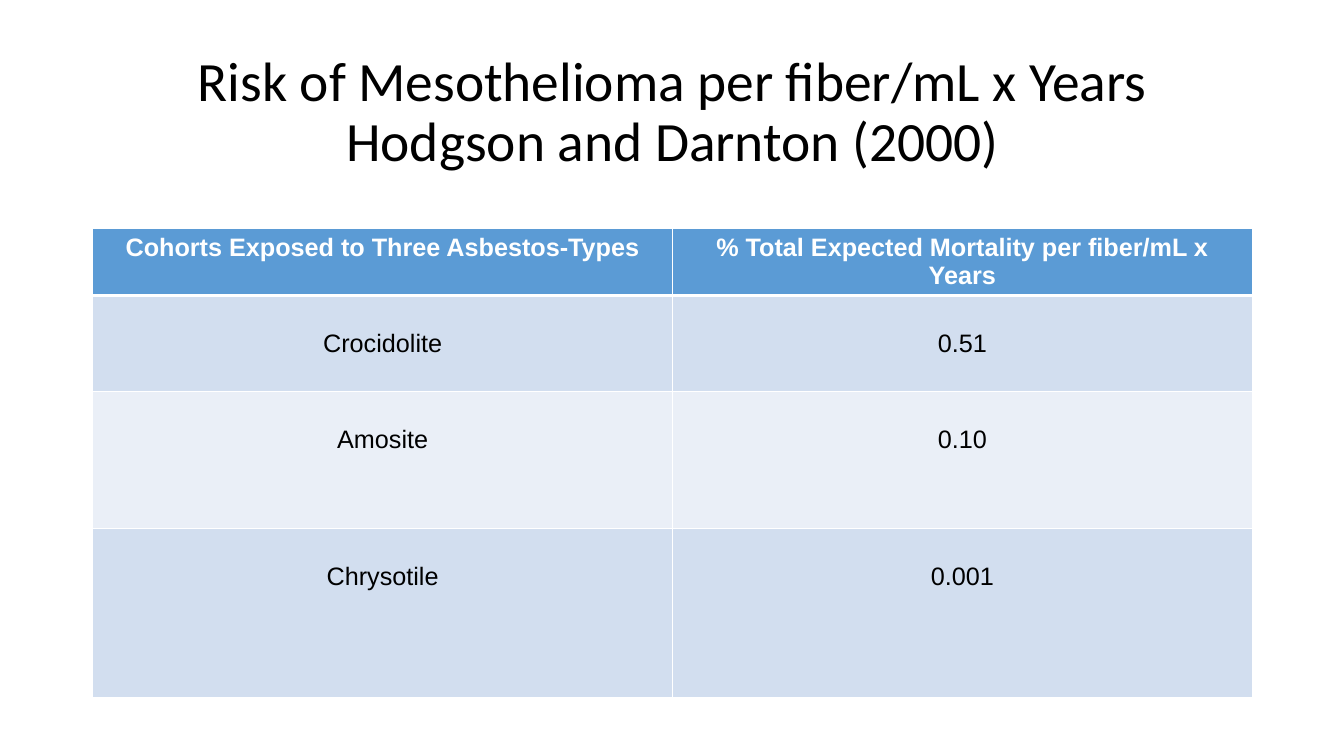
import pptx
import pptx.dml.color
import pptx.enum.text
import pptx.oxml
import pptx.oxml.ns
import pptx.util

Inches, Pt = pptx.util.Inches, pptx.util.Pt
RGB = pptx.dml.color.RGBColor.from_string
ALIGN = pptx.enum.text.PP_ALIGN
ANCHOR = pptx.enum.text.MSO_ANCHOR

THEME = {
    "title_font": "Calibri", "title_size": 39.6,
    "table_font": "Arial", "table_size": 18,
    "text": "000000", "header_text": "FFFFFF", "header_fill": "5B9BD5",
    "bands": ["D2DEEF", "EAEFF7"], "border": "FFFFFF",
}
TITLE = "Risk of Mesothelioma per fiber/mL x Years\vHodgson and Darnton (2000)"
ROWS = [
    ("Cohorts Exposed to Three Asbestos-Types",
     "% Total Expected Mortality per fiber/mL x Years"),
    ("Crocidolite", "0.51"),
    ("Amosite", "0.10"),
    ("Chrysotile", "0.001"),
]
ROW_HEIGHTS = [0.64, 0.95, 1.36, 1.68]
LEFT, WIDTH = 0.92, 11.5


def style_text(p, font, size, color, bold=False):
    p.alignment = ALIGN.CENTER
    for r in p.runs:
        r.font.name = font
        r.font.size = Pt(size)
        r.font.bold = bold
        r.font.color.rgb = RGB(color)


def add_border(cell, side, width):
    """Draw one side (L, R, T or B) of a cell; call before filling the cell."""
    line = pptx.oxml.parse_xml(
        f'<a:ln{side} {pptx.oxml.ns.nsdecls("a")} w="{Pt(width)}">'
        f'<a:solidFill><a:srgbClr val="{THEME["border"]}"/></a:solidFill>'
        f'</a:ln{side}>')
    cell._tc.get_or_add_tcPr().append(line)


prs = pptx.Presentation()
prs.slide_width, prs.slide_height = Inches(13.33), Inches(7.5)
s = prs.slides.add_slide(prs.slide_layouts[6])

# Title
sp = s.shapes.add_textbox(Inches(LEFT), Inches(0.4), Inches(WIDTH), Inches(1.45))
tf = sp.text_frame
tf.word_wrap = True
tf.vertical_anchor = ANCHOR.MIDDLE
p = tf.paragraphs[0]
p.text = TITLE
p.line_spacing = 0.9
style_text(p, THEME["title_font"], THEME["title_size"], THEME["text"])

# Table
table = s.shapes.add_table(len(ROWS), len(ROWS[0]), Inches(LEFT), Inches(2.27),
                           Inches(WIDTH), Inches(sum(ROW_HEIGHTS))).table
for column in table.columns:
    column.width = Inches(WIDTH / len(ROWS[0]))

for i, (values, height) in enumerate(zip(ROWS, ROW_HEIGHTS)):
    header = i == 0
    table.rows[i].height = Inches(height)
    for j, value in enumerate(values):
        cell = table.cell(i, j)
        cell.margin_top = Inches(0.05 if header else 0.34)
        cell.margin_bottom = Inches(0.01)
        cell.vertical_anchor = ANCHOR.TOP
        for side in "LRTB":
            thick = (i, side) in [(0, "B"), (1, "T")]
            add_border(cell, side, 3 if thick else 1)
        cell.fill.solid()
        fill = THEME["header_fill"] if header else THEME["bands"][(i - 1) % 2]
        cell.fill.fore_color.rgb = RGB(fill)
        cell.text_frame.text = value
        style_text(cell.text_frame.paragraphs[0], THEME["table_font"], THEME["table_size"],
                   THEME["header_text" if header else "text"], header)

prs.save("out.pptx")
